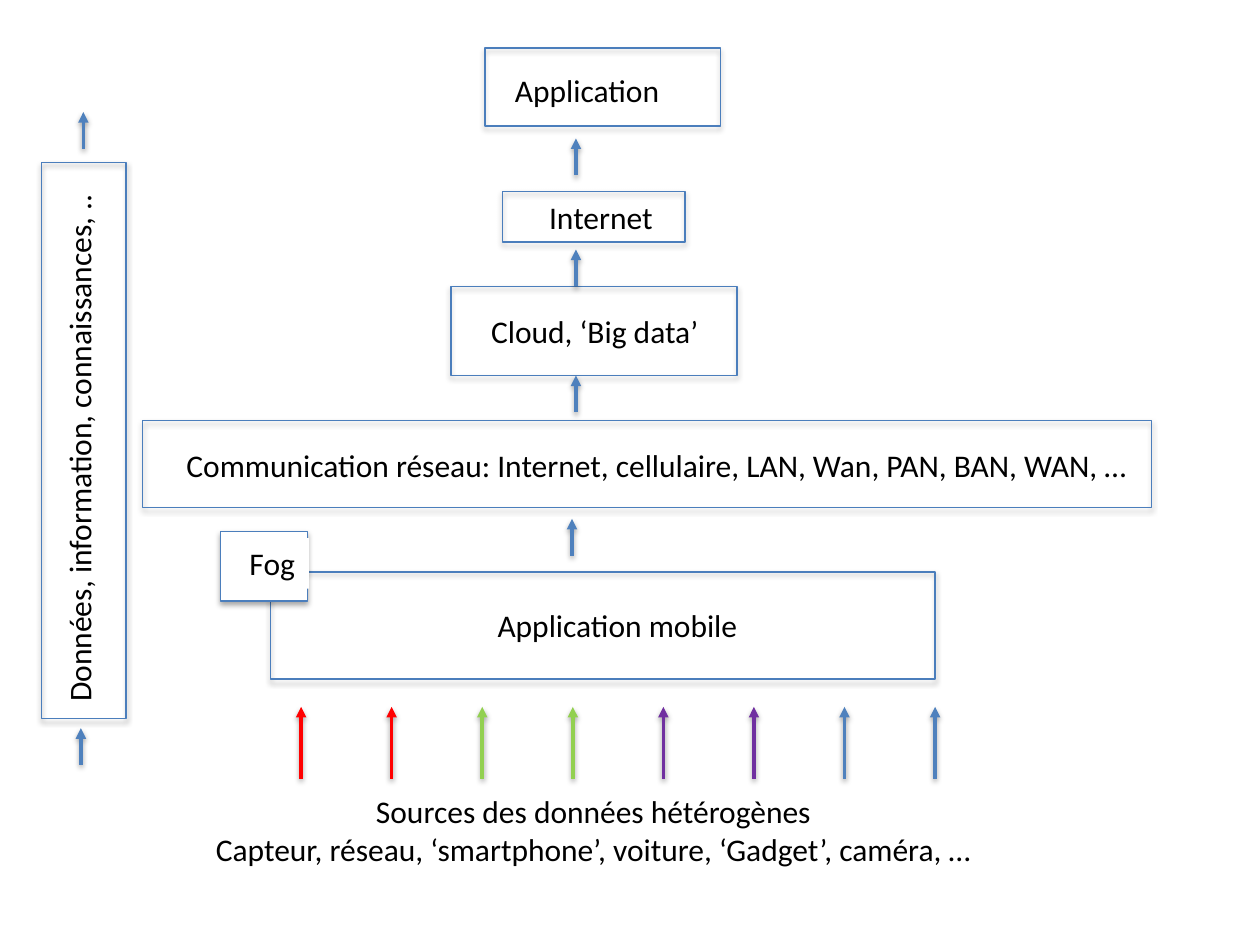
from pptx import Presentation
from pptx.dml.color import RGBColor
from pptx.enum.shapes import MSO_CONNECTOR, MSO_SHAPE
from pptx.enum.text import MSO_AUTO_SIZE, PP_ALIGN
from pptx.oxml.ns import qn
from pptx.util import Cm, Pt
from lxml import etree

RECTANGLE = MSO_SHAPE.RECTANGLE
STRAIGHT = MSO_CONNECTOR.STRAIGHT
LEFT, CENTER = PP_ALIGN.LEFT, PP_ALIGN.CENTER
FIT_SHAPE = MSO_AUTO_SIZE.SHAPE_TO_FIT_TEXT

BLACK, WHITE, BORDER = "000000", "FFFFFF", "4B7EBC"
RED, GREEN, PURPLE, BLUE = "FF0000", "92D050", "7030A0", "4F81BD"
LINE_HEIGHT = 1.02

# Layers: box (left, top, width, height, fill), label (left, top, width, text), in cm
LAYERS = [
    ((9.78, 0.97, 4.75, 1.57, None), (10.13, 1.3, 3.61, "Application")),
    ((10.13, 3.86, 3.68, 1.02, None), (10.82, 3.86, 2.62, "Internet")),
    ((9.09, 5.77, 5.77, 1.8, None), (9.65, 6.17, 4.75, "Cloud, ‘Big data’")),
    ((2.87, 8.48, 20.35, 1.75, None),
     (3.51, 8.86, 19.71,
      "Communication réseau: Internet, cellulaire, LAN, Wan, PAN, BAN, WAN, …")),
    ((5.46, 11.53, 13.39, 2.16, None), (9.78, 12.09, 5.41, "Application mobile")),
    ((4.45, 10.72, 1.75, 1.4, WHITE), (4.78, 10.85, 1.45, "Fog")),
]
DATA_BOX = (0.84, 3.28, 1.7, 11.2, None)
DATA_LABEL = (-3.83, 8.46, 10.85, "Données, information, connaissances, ..")
SOURCES = ["Sources des données hétérogènes",
           "Capteur, réseau, ‘smartphone’, voiture, ‘Gadget’, caméra, …"]

# Arrows: tips of the short ones, then the evenly spaced source row
FLOW_TIPS = [(1.68, 2.26), (1.63, 14.68), (11.53, 10.46),
             (11.61, 7.57), (11.61, 5.03), (11.61, 2.79)]
FLOW_LENGTH = 0.74
SOURCE_COLORS = [color for color in (RED, GREEN, PURPLE, BLUE) for _ in range(2)]
SOURCE_LEFT, SOURCE_RIGHT, SOURCE_TIP, SOURCE_LENGTH = 6.07, 18.85, 14.25, 1.45


def rgb(value):
    return RGBColor.from_string(value)


def add_box(slide, left, top, width, height, fill):
    """Outlined box that keeps the soft shadow of the theme."""
    box = slide.shapes.add_shape(RECTANGLE, Cm(left), Cm(top), Cm(width), Cm(height))
    if fill:
        box.fill.solid()
        box.fill.fore_color.rgb = rgb(fill)
    else:
        box.fill.background()
    box.line.color.rgb = rgb(BORDER)
    box.line.width = Pt(0.75)


def add_label(slide, left, top, width, lines, align=LEFT, height=LINE_HEIGHT):
    label = slide.shapes.add_textbox(Cm(left), Cm(top), Cm(width), Cm(height))
    frame = label.text_frame
    frame.word_wrap = False
    frame.auto_size = FIT_SHAPE
    frame.text = "\n".join(lines)
    for paragraph in frame.paragraphs:
        paragraph.alignment = align
        paragraph.font.name = "Calibri"
        paragraph.font.size = Pt(18)
        paragraph.font.color.rgb = rgb(BLACK)
    return label


def add_up_arrow(slide, x, tip, length, color):
    """Upward arrow that keeps the soft shadow of the theme."""
    arrow = slide.shapes.add_connector(STRAIGHT, Cm(x), Cm(tip + length), Cm(x), Cm(tip))
    arrow.line.color.rgb = rgb(color)
    arrow.line.width = Pt(2)
    etree.SubElement(arrow.line._get_or_add_ln(), qn("a:tailEnd"), type="triangle")


def main():
    prs = Presentation()
    prs.slide_width, prs.slide_height = Cm(25.4), Cm(19.05)
    slide = prs.slides.add_slide(prs.slide_layouts[6])

    # Stack of layers
    for box, (left, top, width, text) in LAYERS:
        add_box(slide, *box)
        label = add_label(slide, left, top, width, [text])
        if box[-1]:
            label.fill.solid()
            label.fill.fore_color.rgb = rgb(box[-1])

    # Vertical data column
    add_box(slide, *DATA_BOX)
    left, top, width, text = DATA_LABEL
    add_label(slide, left, top, width, [text]).rotation = 270

    # Arrows between layers and around the data column
    for x, tip in FLOW_TIPS:
        add_up_arrow(slide, x, tip, FLOW_LENGTH, BLUE)

    # Data sources
    step = (SOURCE_RIGHT - SOURCE_LEFT) / (len(SOURCE_COLORS) - 1)
    for i, color in enumerate(SOURCE_COLORS):
        add_up_arrow(slide, SOURCE_LEFT + i * step, SOURCE_TIP, SOURCE_LENGTH, color)
    add_label(slide, 3.76, 15.85, 16.41, SOURCES, CENTER, 1.8)

    prs.save("out.pptx")


if __name__ == "__main__":
    main()
